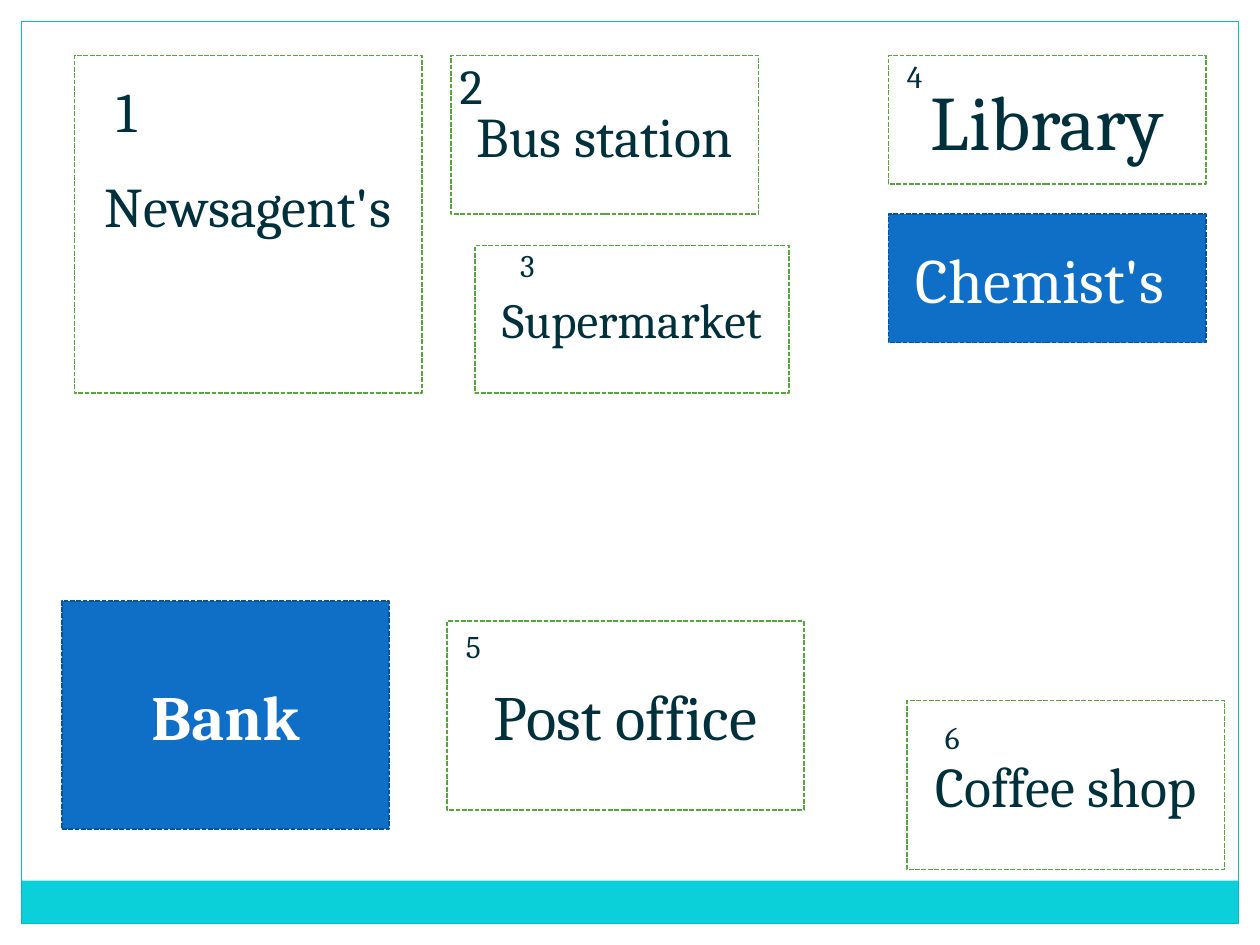
from dataclasses import dataclass

from pptx import Presentation
from pptx.dml.color import RGBColor
from pptx.enum.dml import MSO_LINE
from pptx.enum.shapes import MSO_SHAPE
from pptx.enum.text import MSO_ANCHOR, MSO_AUTO_SIZE, PP_ALIGN
from pptx.util import Inches, Pt


@dataclass(frozen=True)
class Theme:
    font: str = "Cambria"
    ink: str = "01303D"
    white: str = "FFFFFF"
    green: str = "54A838"
    blue: str = "0F6FC6"
    navy: str = "0B5292"
    cyan: str = "0BD0D9"
    teal: str = "0AB8BF"
    small: int = 18
    mid: int = 28
    large: int = 32
    big: int = 36
    huge: int = 44
    thin: float = 0.75
    dash: float = 0.9


@dataclass(frozen=True)
class Place:
    name: str
    box: tuple
    size: int
    known: bool = False
    bold: bool = False
    lift: float = 0


@dataclass(frozen=True)
class Label:
    shift: tuple
    area: tuple
    size: int


THEME = Theme()
DIGIT = (0.34, 0.4)

SPOTS = [
    (Place("Newsagent's", (0.59, 0.44, 2.76, 2.68), THEME.large, lift=0.3),
     Label((0.24, 0.12), (0.39, 0.64), THEME.large)),
    (Place("Bus station", (3.58, 0.44, 2.44, 1.26), THEME.large),
     Label((-0.03, -0.05), (0.42, 0.57), THEME.mid)),
    (Place("Supermarket", (3.77, 1.95, 2.49, 1.17), THEME.mid),
     Label((0.26, -0.05), DIGIT, THEME.small)),
    (Place("Library", (7.05, 0.44, 2.52, 1.02), THEME.huge),
     Label((0.05, -0.04), DIGIT, THEME.small)),
    (Place("Post office", (3.55, 4.93, 2.83, 1.5), THEME.big),
     Label((0.05, 0), DIGIT, THEME.small)),
    (Place("Coffee shop", (7.2, 5.56, 2.52, 1.34), THEME.large),
     Label((0.2, 0.09), DIGIT, THEME.small)),
]

KNOWN = [
    Place("Chemist's ", (7.05, 1.7, 2.52, 1.02), THEME.big, known=True),
    Place("Bank", (0.49, 4.77, 2.6, 1.81), THEME.big, known=True, bold=True),
]


def color(code):
    return RGBColor.from_string(code)


def add_rect(slide, box, fill=None, line=None, width=THEME.thin):
    rect = slide.shapes.add_shape(MSO_SHAPE.RECTANGLE, *map(Inches, box))
    rect.shadow.inherit = False
    if fill:
        rect.fill.solid()
        rect.fill.fore_color.rgb = color(fill)
    else:
        rect.fill.background()
    if line:
        rect.line.color.rgb = color(line)
        rect.line.width = Pt(width)
    else:
        rect.line.fill.background()
    return rect


def write(frame, text, size, ink, bold=False, align=PP_ALIGN.LEFT):
    para = frame.paragraphs[0]
    para.text = text
    para.alignment = align
    font = para.font
    font.name = THEME.font
    font.size = Pt(size)
    font.bold = bold
    font.color.rgb = color(ink)


def draw_frame(slide, box):
    left, top, width, height = box
    band = 0.34
    add_rect(slide, (left, top + height - band, width, band), THEME.cyan)
    add_rect(slide, box, line=THEME.teal)


def draw_place(slide, place):
    fill, line, ink = (
        (THEME.blue, THEME.navy, THEME.white) if place.known
        else (THEME.white, THEME.green, THEME.ink))
    rect = add_rect(slide, place.box, fill, line, THEME.dash)
    rect.line.dash_style = MSO_LINE.SQUARE_DOT
    frame = rect.text_frame
    frame.word_wrap = True
    frame.vertical_anchor = MSO_ANCHOR.MIDDLE
    frame.margin_bottom = Inches(0.05 + place.lift)
    write(frame, place.name, place.size, ink, place.bold, PP_ALIGN.CENTER)


def draw_label(slide, number, label, box):
    left, top = (edge + gap for edge, gap in zip(box, label.shift))
    text = slide.shapes.add_textbox(*map(Inches, (left, top, *label.area)))
    frame = text.text_frame
    frame.word_wrap = False
    frame.auto_size = MSO_AUTO_SIZE.SHAPE_TO_FIT_TEXT
    write(frame, str(number), label.size, THEME.ink)


def draw_map(slide):
    draw_frame(slide, (0.17, 0.17, 9.66, 7.16))
    for place in KNOWN:
        draw_place(slide, place)
    for place, label in SPOTS:
        draw_place(slide, place)
    for number, (place, label) in enumerate(SPOTS, 1):
        draw_label(slide, number, label, place.box)


def main():
    deck = Presentation()
    deck.slide_width = Inches(10)
    deck.slide_height = Inches(7.5)
    draw_map(deck.slides.add_slide(deck.slide_layouts[6]))
    deck.save("out.pptx")


if __name__ == "__main__":
    main()
